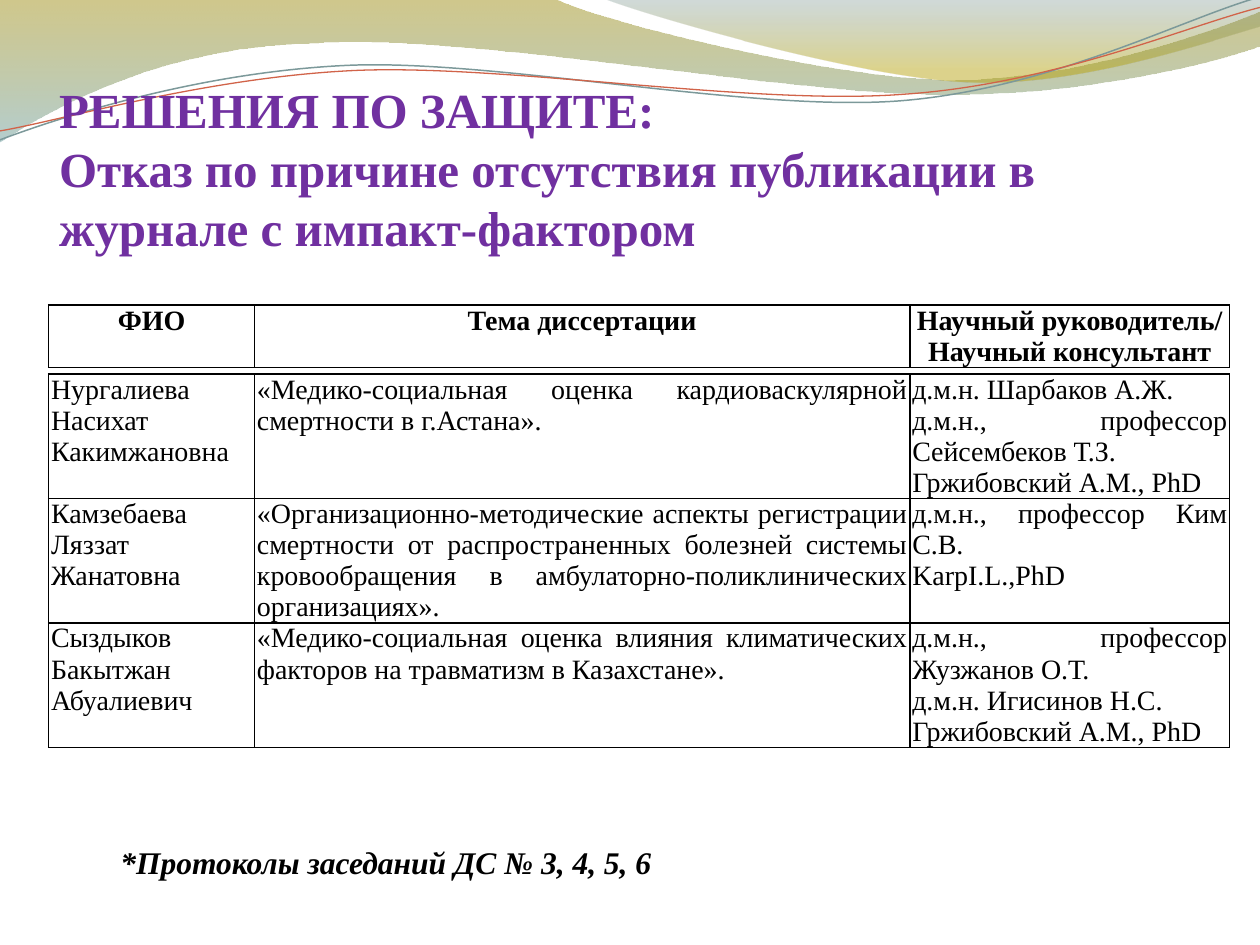
from dataclasses import dataclass

from lxml import etree
from pptx import Presentation
from pptx.dml.color import RGBColor
from pptx.enum.text import MSO_ANCHOR, PP_ALIGN
from pptx.oxml.ns import qn
from pptx.util import Cm, Pt

LEFT, CENTER, JUSTIFY = PP_ALIGN.LEFT, PP_ALIGN.CENTER, PP_ALIGN.JUSTIFY
BOTTOM = MSO_ANCHOR.BOTTOM
TITLE_ONLY = 5
UNITS_PER_CM = 1000
CURVE_TILT = -2.7


@dataclass(frozen=True)
class Theme:
    font: str = "Times New Roman"
    title_color: str = "7030A0"
    text_color: str = "000000"
    teal_line: str = "7C999A"
    red_line: str = "D16349"
    title_size: int = 28
    table_size: int = 16
    note_size: int = 18
    border_width: int = 1
    # Gradient stops: position, colour, opacity in percent
    wide_wave: tuple = ((0, "978500", 45), (1, "77A5A6", 55))
    corner_wave: tuple = ((0, "648484", 30), (0.8, "B49F00", 45))


class SlideBuilder:
    def __init__(self, slide, theme):
        self.slide = slide
        self.theme = theme

    def format_paragraph(self, paragraph, size, color, align=LEFT, bold=False, italic=False):
        paragraph.alignment = align
        font = paragraph.font
        font.name, font.size = self.theme.font, Pt(size)
        font.bold, font.italic = bold, italic
        font.color.rgb = RGBColor.from_string(color)

    def outline(self, start, segments, close):
        """A segment is x, y for a line or x1, y1, x2, y2, x3, y3 for a cubic curve."""
        points = [start]
        for segment in segments:
            points.extend(zip(segment[::2], segment[1::2]))
        scaled = [(round(x * UNITS_PER_CM), round(y * UNITS_PER_CM)) for x, y in points]
        builder = self.slide.shapes.build_freeform(*scaled[0], scale=Cm(1) / UNITS_PER_CM)
        builder.add_line_segments(scaled[1:], close=close)
        shape = builder.convert_to_shape()
        shape.shadow.inherit = False
        # Join every three points of a curve into one Bezier segment
        lines = iter(list(shape._element.iter(qn("a:lnTo"))))
        for segment in segments:
            first = next(lines)
            if len(segment) == 6:
                curve = etree.Element(qn("a:cubicBezTo"))
                first.addprevious(curve)
                for line in (first, next(lines), next(lines)):
                    curve.append(line[0])
                    line.getparent().remove(line)
        return shape

    def wave(self, start, segments, stops):
        shape = self.outline(start, segments, close=True)
        shape.line.fill.background()
        shape.fill.gradient()
        shape.fill.gradient_angle = 270
        for stop, (position, color, _) in zip(shape.fill.gradient_stops, stops):
            stop.position = position
            stop.color.rgb = RGBColor.from_string(color)
        for element, (_, _, opacity) in zip(shape._element.iter(qn("a:srgbClr")), stops):
            etree.SubElement(element, qn("a:alpha"), val=str(opacity * 1000))

    def curve(self, start, segments, color, width):
        shape = self.outline(start, segments, close=False)
        shape.rotation = CURVE_TILT
        shape.fill.background()
        shape.line.color.rgb = RGBColor.from_string(color)
        shape.line.width = Pt(width)

    def title(self, text, left, top, width, height):
        shape = self.slide.shapes.title
        shape.left, shape.top, shape.width, shape.height = map(Cm, (left, top, width, height))
        # Bring the title in front of the waves
        self.slide.shapes._spTree.append(shape._element)
        frame = shape.text_frame
        frame.word_wrap = True
        frame.vertical_anchor = BOTTOM
        frame.margin_left = frame.margin_right = frame.margin_bottom = 0
        paragraph = frame.paragraphs[0]
        paragraph.text = text
        self.format_paragraph(paragraph, self.theme.title_size, self.theme.title_color, bold=True)

    def note(self, text, left, top, width, height):
        box = self.slide.shapes.add_textbox(*map(Cm, (left, top, width, height)))
        box.text_frame.word_wrap = True
        paragraph = box.text_frame.paragraphs[0]
        paragraph.text = text
        self.format_paragraph(paragraph, self.theme.note_size, self.theme.text_color,
                              bold=True, italic=True)

    def border(self, cell):
        properties = cell._tc.get_or_add_tcPr()
        for side in ("a:lnL", "a:lnR", "a:lnT", "a:lnB"):
            line = etree.SubElement(properties, qn(side), w=str(Pt(self.theme.border_width)))
            fill = etree.SubElement(line, qn("a:solidFill"))
            etree.SubElement(fill, qn("a:srgbClr"), val=self.theme.text_color)

    def table(self, rows, left, top, column_widths, row_height, align, bold=False):
        table = self.slide.shapes.add_table(
            len(rows), len(column_widths), Cm(left), Cm(top),
            Cm(sum(column_widths)), Cm(row_height * len(rows))).table
        table.first_row = table.horz_banding = False
        for column, width in zip(table.columns, column_widths):
            column.width = Cm(width)
        for row, texts in zip(table.rows, rows):
            row.height = Cm(row_height)
            for cell, text in zip(row.cells, texts):
                self.border(cell)
                cell.fill.background()
                cell.margin_left = cell.margin_right = Cm(0.05)
                cell.margin_top = cell.margin_bottom = 0
                cell.text = text
                for paragraph in cell.text_frame.paragraphs:
                    self.format_paragraph(paragraph, self.theme.table_size,
                                          self.theme.text_color, align, bold)


def main():
    theme = Theme()
    presentation = Presentation()
    presentation.slide_width, presentation.slide_height = Cm(25.4), Cm(19.05)
    slide = presentation.slides.add_slide(presentation.slide_layouts[TITLE_ONLY])
    builder = SlideBuilder(slide, theme)

    # Waves along the top edge
    builder.wave((0, 0), [
        (11.18, -0.03),
        (12.09, 0.43, 16.87, 1.6, 19.25, 1.6), (21.67, 1.6, 24.33, 0.66, 25.4, 0.23),
        (25.43, 0.91),
        (24.97, 1.12, 22.1, 1.93, 18.95, 1.9), (15.8, 1.9, 9.7, 0.71, 6.53, 0.86),
        (3.28, 0.91, 1.17, 2.11, -0.03, 2.87)], theme.wide_wave)
    builder.wave((12.17, -0.03), [
        (12.93, 0.28, 17.32, 1.57, 19.53, 1.65), (21.74, 1.75, 24.41, 0.81, 25.4, 0.53),
        (25.4, 0)], theme.corner_wave)

    # Thin tilted lines over the waves
    builder.curve((-0.05, 2.22), [
        (1.19, 1.82, 4.02, 1.04, 7.05, 1.05), (10.05, 1.07, 15.02, 2.37, 18.08, 2.29),
        (21.13, 2.2, 23.87, 0.91, 25.41, 0.55)], theme.teal_line, 0.85)
    builder.curve((-0.04, 2.04), [
        (1.16, 1.9, 4.18, 1.15, 7.2, 1.16), (10.25, 1.18, 15.13, 2.25, 18.19, 2.16),
        (21.21, 2.1, 23.93, 1.06, 25.45, 0.75)], theme.red_line, 0.75)

    builder.title("РЕШЕНИЯ ПО ЗАЩИТЕ: \v"
                  "Отказ по причине отсутствия публикации в журнале с импакт-фактором",
                  1.19, 1.98, 22.86, 3.18)

    # Body and heading tables share their columns
    column_widths = (4.15, 13.21, 6.45)
    headings = [("ФИО", "Тема диссертации", "Научный руководитель/ Научный консультант")]
    dissertations = [
        ("Нургалиева  Насихат Какимжановна",
         "«Медико-социальная оценка кардиоваскулярной смертности в г.Астана».",
         "д.м.н. Шарбаков А.Ж. \nд.м.н., профессор Сейсембеков Т.З.\nГржибовский А.М., PhD"),
        ("Камзебаева Ляззат Жанатовна",
         "«Организационно-методические аспекты регистрации смертности от распространенных "
         "болезней системы кровообращения в амбулаторно-поликлинических организациях».",
         "д.м.н., профессор Ким С.В.\nKarpI.L.,PhD"),
        ("Сыздыков Бакытжан Абуалиевич",
         "«Медико-социальная оценка влияния климатических факторов на травматизм "
         "в Казахстане». ",
         "д.м.н., профессор Жузжанов О.Т.\nд.м.н. Игисинов Н.С.\nГржибовский А.М., PhD"),
    ]
    builder.table(dissertations, 0.98, 7.54, column_widths, 2.5, JUSTIFY)
    builder.table(headings, 0.98, 6.15, column_widths, 1.26, CENTER, bold=True)

    # Note below the tables
    builder.note("*Протоколы заседаний ДС № 3, 4, 5, 6", 2.18, 16.87, 12.12, 1.02)

    presentation.save("out.pptx")


if __name__ == "__main__":
    main()
